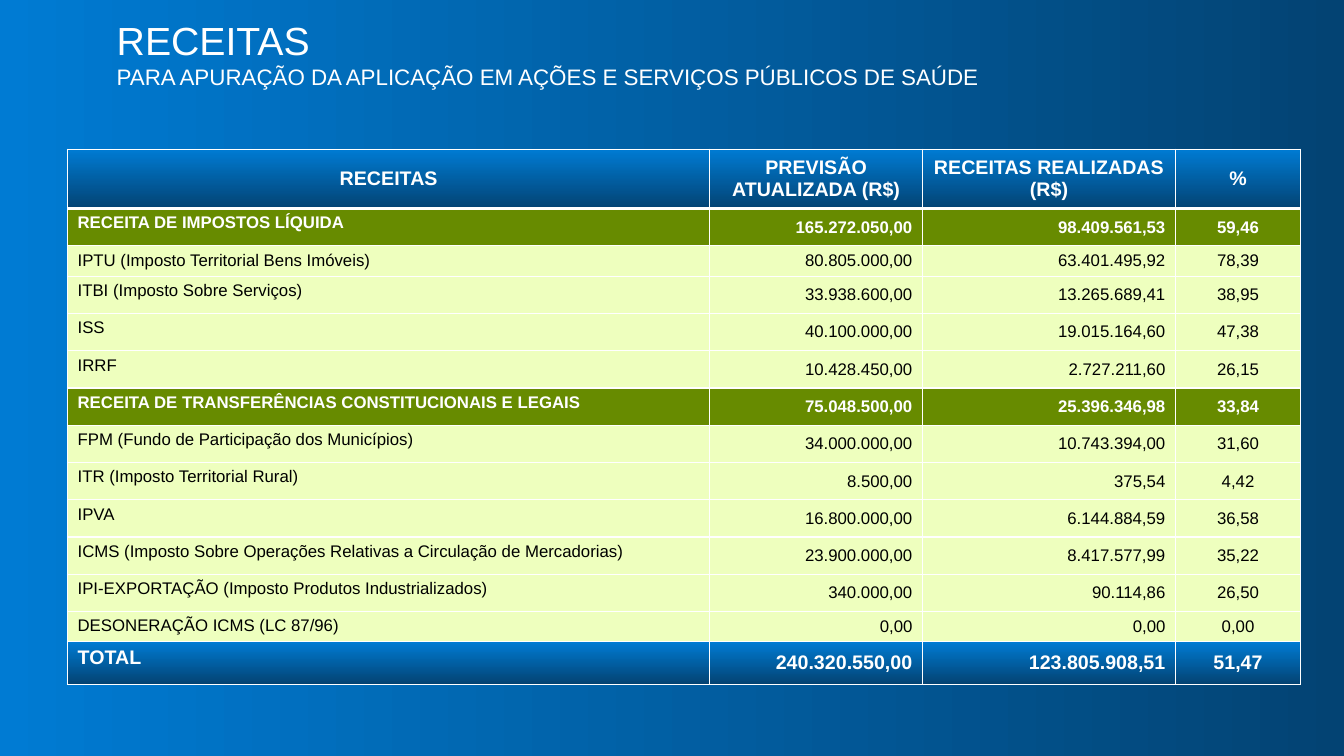
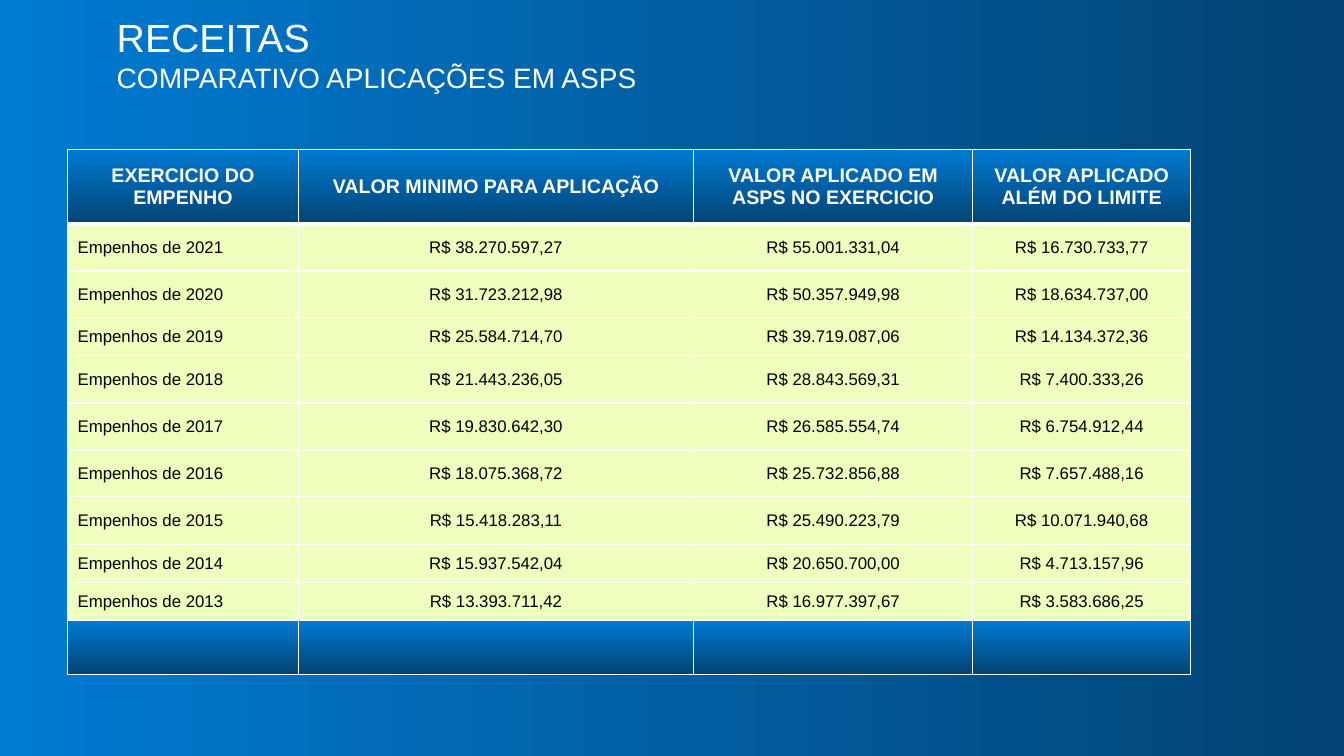
from dataclasses import dataclass

from lxml import etree
from pptx import Presentation
from pptx.dml.color import RGBColor
from pptx.enum.text import MSO_ANCHOR, PP_ALIGN
from pptx.oxml.ns import qn
from pptx.util import Inches, Pt

LEFT, CENTER, RIGHT = PP_ALIGN.LEFT, PP_ALIGN.CENTER, PP_ALIGN.RIGHT
TOP, MIDDLE = MSO_ANCHOR.TOP, MSO_ANCHOR.MIDDLE


@dataclass(frozen=True)
class Theme:
    font: str = "Arial"
    gradient: tuple = ("007BD3", "034373")
    green: str = "678B00"
    pale: str = "EEFFBE"
    white: str = "FFFFFF"
    black: str = "000000"
    title_size: int = 28
    strong_size: int = 14
    body_size: int = 12
    border: int = 1
    header_border: int = 3


THEME = Theme()

# Row kinds: fill (None means the gradient), text colour, size, bold
ROW_STYLES = {
    "header": (None, THEME.white, THEME.strong_size, True),
    "group": (THEME.green, THEME.white, THEME.body_size, True),
    "item": (THEME.pale, THEME.black, THEME.body_size, False),
    "total": (None, THEME.white, THEME.strong_size, True),
}

# Slide content: each table row is (kind, height, cell texts)
SLIDES = [
    {
        "subtitle": "PARA APURAÇÃO DA APLICAÇÃO EM AÇÕES E SERVIÇOS PÚBLICOS DE SAÚDE",
        "subtitle_size": 16,
        "columns": [6.37, 2.11, 2.51, 1.24],
        "alignments": [LEFT, RIGHT, RIGHT, CENTER],
        "label_anchor": TOP,
        "rows": [
            ("header", 0.59, ["RECEITAS", "PREVISÃO ATUALIZADA (R$)", "RECEITAS REALIZADAS (R$)", "%"]),
            ("group", 0.37, ["RECEITA DE IMPOSTOS LÍQUIDA", "165.272.050,00", "98.409.561,53", "59,46"]),
            ("item", 0.27, ["IPTU (Imposto Territorial Bens Imóveis)", "80.805.000,00", "63.401.495,92", "78,39"]),
            ("item", 0.37, ["ITBI (Imposto Sobre Serviços)", "33.938.600,00", "13.265.689,41", "38,95"]),
            ("item", 0.37, ["ISS", "40.100.000,00", "19.015.164,60", "47,38"]),
            ("item", 0.37, ["IRRF", "10.428.450,00", "2.727.211,60", "26,15"]),
            ("group", 0.37, ["RECEITA DE TRANSFERÊNCIAS CONSTITUCIONAIS E LEGAIS",
                             "75.048.500,00", "25.396.346,98", "33,84"]),
            ("item", 0.37, ["FPM (Fundo de Participação dos Municípios)",
                            "34.000.000,00", "10.743.394,00", "31,60"]),
            ("item", 0.37, ["ITR (Imposto Territorial Rural)", "8.500,00", "375,54", "4,42"]),
            ("item", 0.37, ["IPVA", "16.800.000,00", "6.144.884,59", "36,58"]),
            ("item", 0.37, ["ICMS (Imposto Sobre Operações Relativas a Circulação de Mercadorias)",
                            "23.900.000,00", "8.417.577,99", "35,22"]),
            ("item", 0.37, ["IPI-EXPORTAÇÃO (Imposto Produtos Industrializados)",
                            "340.000,00", "90.114,86", "26,50"]),
            ("item", 0.3, ["DESONERAÇÃO ICMS (LC 87/96)", "0,00", "0,00", "0,00"]),
            ("total", 0.42, ["TOTAL", "240.320.550,00", "123.805.908,51", "51,47"]),
        ],
    },
    {
        "subtitle": "COMPARATIVO APLICAÇÕES EM ASPS",
        "subtitle_size": 20,
        "columns": [2.29, 3.92, 2.77, 2.16],
        "alignments": [LEFT, CENTER, CENTER, CENTER],
        "label_anchor": MIDDLE,
        "rows": [
            ("header", 0.74, ["EXERCICIO DO EMPENHO", "VALOR MINIMO PARA APLICAÇÃO",
                              "VALOR APLICADO EM ASPS NO EXERCICIO", "VALOR APLICADO ALÉM DO LIMITE"]),
            ("item", 0.47, ["Empenhos de 2021", "R$ 38.270.597,27", "R$ 55.001.331,04", "R$ 16.730.733,77"]),
            ("item", 0.46, ["Empenhos de 2020", "R$ 31.723.212,98", "R$ 50.357.949,98", "R$ 18.634.737,00"]),
            ("item", 0.38, ["Empenhos de 2019", "R$ 25.584.714,70", "R$ 39.719.087,06", "R$ 14.134.372,36"]),
            ("item", 0.47, ["Empenhos de 2018", "R$ 21.443.236,05", "R$ 28.843.569,31", "R$ 7.400.333,26"]),
            ("item", 0.47, ["Empenhos de 2017", "R$ 19.830.642,30", "R$ 26.585.554,74", "R$ 6.754.912,44"]),
            ("item", 0.46, ["Empenhos de 2016", "R$ 18.075.368,72", "R$ 25.732.856,88", "R$ 7.657.488,16"]),
            ("item", 0.47, ["Empenhos de 2015", "R$ 15.418.283,11", "R$ 25.490.223,79", "R$ 10.071.940,68"]),
            ("item", 0.38, ["Empenhos de 2014", "R$ 15.937.542,04", "R$ 20.650.700,00", "R$ 4.713.157,96"]),
            ("item", 0.38, ["Empenhos de 2013", "R$ 13.393.711,42", "R$ 16.977.397,67", "R$ 3.583.686,25"]),
            ("total", 0.53, ["", "", "", ""]),
        ],
    },
]


def fill_gradient(fill, angle):
    fill.gradient()
    fill.gradient_angle = angle
    for stop, color in zip(fill.gradient_stops, THEME.gradient):
        stop.color.rgb = RGBColor.from_string(color)


def add_borders(cell, top, bottom):
    properties = cell._tc.get_or_add_tcPr()
    widths = {"a:lnL": THEME.border, "a:lnR": THEME.border, "a:lnT": top, "a:lnB": bottom}
    for tag, width in widths.items():
        line = etree.SubElement(properties, qn(tag), w=str(Pt(width)))
        solid = etree.SubElement(line, qn("a:solidFill"))
        etree.SubElement(solid, qn("a:srgbClr"), val=THEME.white)


presentation = Presentation()
presentation.slide_width = Inches(13.33)
presentation.slide_height = Inches(7.5)
blank_layout = presentation.slide_layouts[6]

for content in SLIDES:
    slide = presentation.slides.add_slide(blank_layout)
    fill_gradient(slide.background.fill, 0)

    # Title with subtitle on its second line
    title = slide.shapes.add_textbox(Inches(1.06), Inches(0.21), Inches(12), Inches(0.64))
    text_frame = title.text_frame
    text_frame.word_wrap = True
    text_frame.vertical_anchor = MIDDLE
    paragraph = text_frame.paragraphs[0]
    paragraph.text = "RECEITAS\v" + content["subtitle"]
    for run, size in zip(paragraph.runs, (THEME.title_size, content["subtitle_size"])):
        run.font.name = THEME.font
        run.font.size = Pt(size)
        run.font.color.rgb = RGBColor.from_string(THEME.white)

    # Table grid
    rows, columns = content["rows"], content["columns"]
    table = slide.shapes.add_table(
        len(rows), len(columns), Inches(0.67), Inches(1.48),
        Inches(sum(columns)), Inches(sum(height for _, height, _ in rows))).table
    table.horz_banding = False
    for column, width in zip(table.columns, columns):
        column.width = Inches(width)

    # Table cells
    for row_index, (kind, height, texts) in enumerate(rows):
        table.rows[row_index].height = Inches(height)
        fill_color, text_color, size, bold = ROW_STYLES[kind]
        top_border = THEME.header_border if row_index == 1 else THEME.border
        bottom_border = THEME.header_border if kind == "header" else THEME.border
        for column_index, text in enumerate(texts):
            cell = table.cell(row_index, column_index)
            add_borders(cell, top_border, bottom_border)
            if fill_color is None:
                fill_gradient(cell.fill, 270)
            else:
                cell.fill.solid()
                cell.fill.fore_color.rgb = RGBColor.from_string(fill_color)
            is_label = column_index == 0 and kind != "header"
            cell.vertical_anchor = content["label_anchor"] if is_label else MIDDLE
            paragraph = cell.text_frame.paragraphs[0]
            paragraph.text = text
            paragraph.alignment = CENTER if kind == "header" else content["alignments"][column_index]
            for run in paragraph.runs:
                run.font.name = THEME.font
                run.font.size = Pt(size)
                run.font.bold = bold
                run.font.color.rgb = RGBColor.from_string(text_color)

presentation.save("out.pptx")
